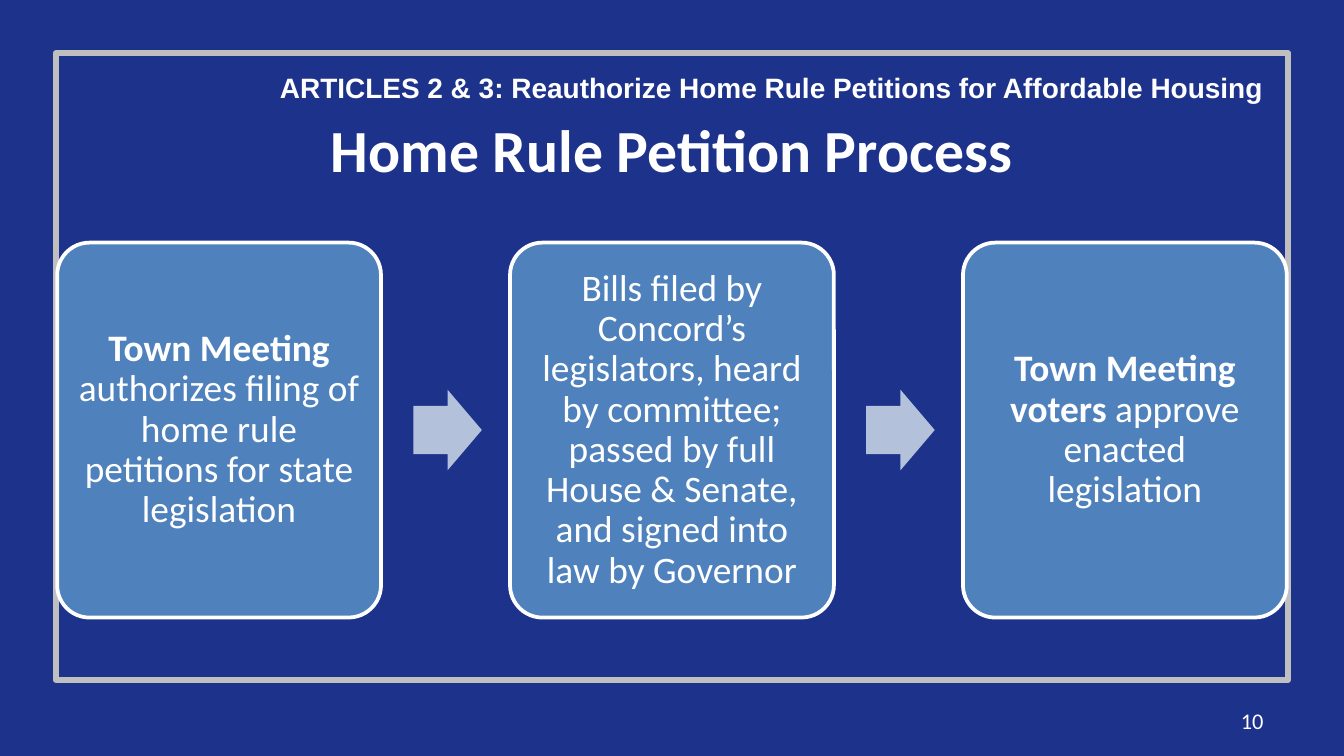
from pptx import Presentation
from pptx import util as u
from pptx.dml.color import RGBColor
from pptx.enum import shapes, text

PX = 4572  # EMU per px, 200 px to the inch

NAVY = RGBColor(0x1D, 0x32, 0x8B)
WHITE = RGBColor(0xFF, 0xFF, 0xFF)
GRAY = RGBColor(0xBF, 0xBF, 0xBF)
STEP_BLUE = RGBColor(0x4F, 0x81, 0xBD)
ARROW_BLUE = RGBColor(0xB3, 0xC1, 0xDB)

STEP_LEFT, STEP_TOP, STEP_WIDTH, STEP_HEIGHT = 85, 361, 482, 558
STEP_PITCH = 674
ARROW_OFFSET, ARROW_WIDTH, ARROW_HEIGHT = 530, 102, 120

# Each step is a list of (words, bold) runs.
STEPS = [
    [("Town Meeting ", True),
     ("authorizes filing of home rule petitions for state legislation", False)],
    [("Bills filed by Concord’s legislators, heard by committee; passed by "
      "full House & Senate, and signed into law by Governor", False)],
    [("Town Meeting voters", True), (" approve enacted legislation", False)],
]


def px(*lengths):
    return [u.Emu(length * PX) for length in lengths]


def format_font(font, size, bold=False, name="Calibri"):
    font.name = name
    font.size = u.Pt(size)
    font.bold = bold
    font.color.rgb = WHITE


def add_preset(slide, kind, box, fill=None, line=None, line_width=0, adjustments=()):
    shape = slide.shapes.add_shape(kind, *px(*box))
    shape.shadow.inherit = False
    for index, value in enumerate(adjustments):
        shape.adjustments[index] = value
    if fill is None:
        shape.fill.background()
    else:
        shape.fill.solid()
        shape.fill.fore_color.rgb = fill
    if line is None:
        shape.line.fill.background()
    else:
        shape.line.color.rgb = line
        shape.line.width = u.Pt(line_width)
    return shape


def set_title(slide, words, box):
    title = slide.shapes.title
    title.left, title.top, title.width, title.height = px(*box)
    frame = title.text_frame
    frame.text = words
    frame.auto_size = text.MSO_AUTO_SIZE.NONE
    frame.vertical_anchor = text.MSO_ANCHOR.MIDDLE
    paragraph = frame.paragraphs[0]
    paragraph.alignment = text.PP_ALIGN.CENTER
    format_font(paragraph.runs[0].font, 32, True)


def add_right_label(slide, words, box, anchor, **font):
    frame = slide.shapes.add_textbox(*px(*box)).text_frame
    frame.word_wrap = True
    frame.vertical_anchor = anchor
    frame.text = words
    paragraph = frame.paragraphs[0]
    paragraph.alignment = text.PP_ALIGN.RIGHT
    format_font(paragraph.runs[0].font, **font)


def add_step(slide, left, runs):
    shape = add_preset(slide, shapes.MSO_SHAPE.ROUNDED_RECTANGLE,
                       (left, STEP_TOP, STEP_WIDTH, STEP_HEIGHT),
                       STEP_BLUE, WHITE, 2, [0.1])
    frame = shape.text_frame
    frame.word_wrap = True
    frame.vertical_anchor = text.MSO_ANCHOR.MIDDLE
    (frame.margin_left, frame.margin_top,
     frame.margin_right, frame.margin_bottom) = px(16, 16, 16, 16)
    paragraph = frame.paragraphs[0]
    paragraph.alignment = text.PP_ALIGN.CENTER
    paragraph.line_spacing = 0.9
    for words, bold in runs:
        run = paragraph.add_run()
        run.text = words
        format_font(run.font, 20, bold)


def add_arrow(slide, left):
    top = STEP_TOP + (STEP_HEIGHT - ARROW_HEIGHT) // 2
    add_preset(slide, shapes.MSO_SHAPE.RIGHT_ARROW,
               (left, top, ARROW_WIDTH, ARROW_HEIGHT),
               ARROW_BLUE, adjustments=[0.6, 0.5])


def main():
    presentation = Presentation()
    presentation.slide_width, presentation.slide_height = px(2000, 1125)
    slide = presentation.slides.add_slide(presentation.slide_layouts[5])
    slide.background.fill.solid()
    slide.background.fill.fore_color.rgb = NAVY

    add_preset(slide, shapes.MSO_SHAPE.RECTANGLE, (83, 79, 1834, 933),
               line=GRAY, line_width=3)
    set_title(slide, "Home Rule Petition Process", (100, 137, 1800, 168))
    add_right_label(
        slide, "ARTICLES 2 & 3: Reauthorize Home Rule Petitions for Affordable Housing",
        (366, 95, 1534, 66), text.MSO_ANCHOR.TOP, size=15, bold=True, name="Arial")
    for index, runs in enumerate(STEPS):
        left = STEP_LEFT + index * STEP_PITCH
        add_step(slide, left, runs)
        if index < len(STEPS) - 1:
            add_arrow(slide, left + ARROW_OFFSET)
    add_right_label(slide, "10", (1434, 1043, 466, 60), text.MSO_ANCHOR.MIDDLE, size=12)

    presentation.save("out.pptx")


if __name__ == "__main__":
    main()
